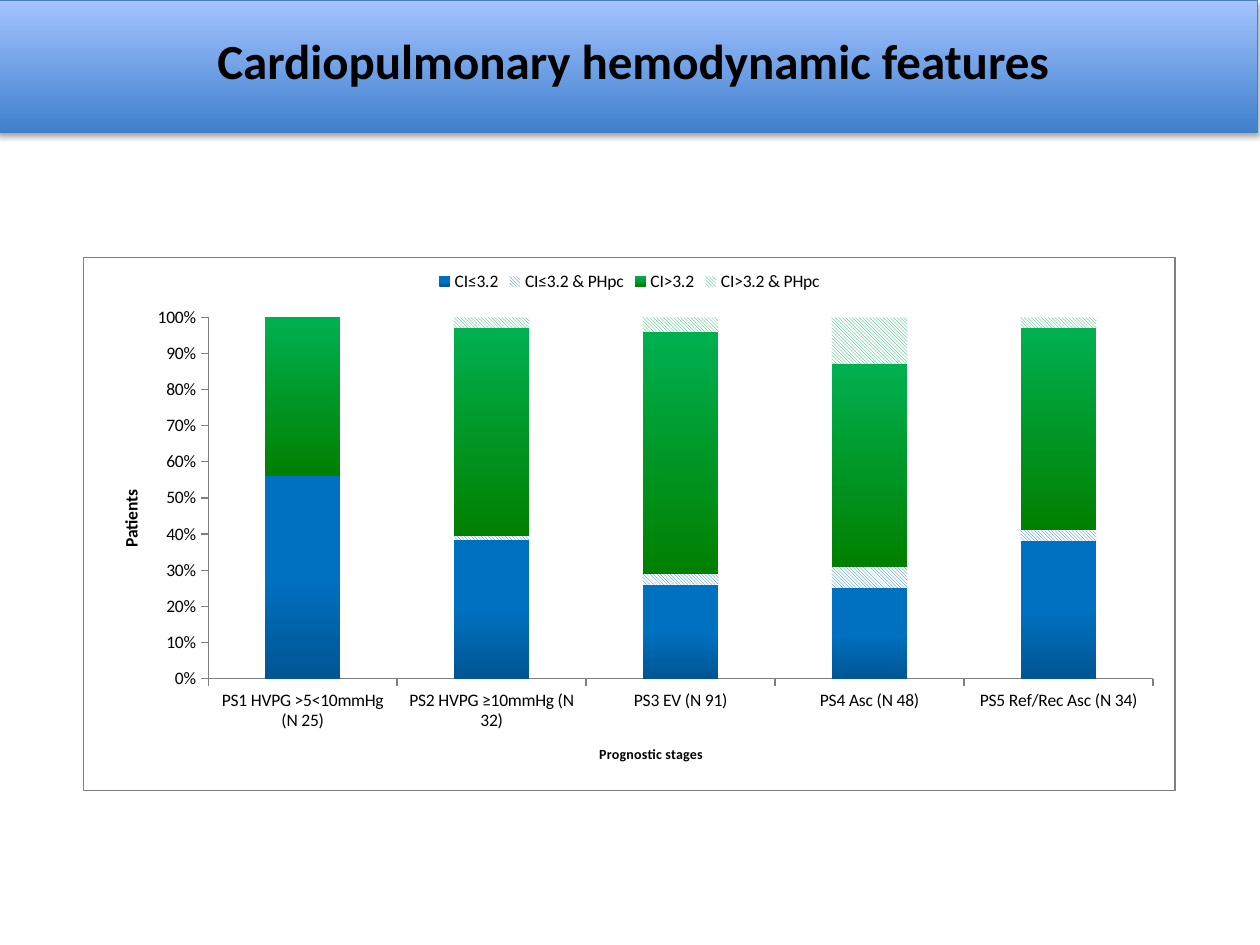
from lxml import etree
from pptx import Presentation
from pptx import util as u
from pptx.chart import data
from pptx.dml.color import RGBColor
from pptx.enum import chart as charts, dml, shapes, text
from pptx.oxml import parse_xml
from pptx.oxml.ns import nsdecls, qn

BLACK = RGBColor(0x00, 0x00, 0x00)
WHITE = RGBColor(0xFF, 0xFF, 0xFF)
GRAY = RGBColor(0x7F, 0x7F, 0x7F)
BANNER_LINE = RGBColor(0x4B, 0x7E, 0xBC)
BANNER_DARK = RGBColor(0x3F, 0x80, 0xCE)
BANNER_LIGHT = RGBColor(0xA4, 0xC4, 0xFF)
BLUE_DARK = RGBColor(0x00, 0x56, 0x95)
BLUE = RGBColor(0x00, 0x70, 0xC0)
GREEN_DARK = RGBColor(0x00, 0x80, 0x00)
GREEN = RGBColor(0x00, 0xB0, 0x50)

STAGES = [
    "PS1 HVPG >5<10mmHg (N 25)",
    "PS2 HVPG ≥10mmHg (N 32)",
    "PS3 EV (N 91)",
    "PS4 Asc (N 48)",
    "PS5 Ref/Rec Asc (N 34)",
]
PATIENTS = {
    "CI≤3.2": (56, 38, 26, 25, 38),
    "CI≤3.2 & PHpc": (0, 1, 3, 6, 3),
    "CI>3.2": (44, 57, 67, 56, 56),
    "CI>3.2 & PHpc": (0, 3, 4, 13, 3),
}


class Deck:
    font_name = "Calibri"

    def __init__(self, slide):
        self.slide = slide

    def style(self, font, size, bold=False):
        font.name = self.font_name
        font.size = u.Pt(size)
        font.bold = bold
        font.color.rgb = BLACK

    def gradient(self, fill, bottom, top, start=0, end=1):
        fill.gradient()
        fill.gradient_angle = 90
        for stop, color, position in zip(fill.gradient_stops, (bottom, top), (start, end)):
            stop.color.rgb = color
            stop.position = position

    def hatch(self, fill, color):
        fill.patterned()
        fill.pattern = dml.MSO_PATTERN.DARK_DOWNWARD_DIAGONAL
        fill.fore_color.rgb = color
        fill.back_color.rgb = WHITE

    def banner(self, left, top, width, height):
        banner = self.slide.shapes.add_shape(
            shapes.MSO_SHAPE.RECTANGLE, left, top, width, height)
        self.gradient(banner.fill, BANNER_DARK, BANNER_LIGHT)
        banner.line.color.rgb = BANNER_LINE
        banner.line.width = u.Pt(0.75)
        banner.shadow.inherit = False
        effects = banner.element.spPr.find(qn("a:effectLst"))
        effects.append(parse_xml(
            f'<a:outerShdw {nsdecls("a")} blurRad="{u.Pt(3.1)}" dist="{u.Pt(1.8)}" '
            'dir="5400000" rotWithShape="0"><a:srgbClr val="000000">'
            '<a:alpha val="35000"/></a:srgbClr></a:outerShdw>'))
        self.slide.shapes.title.element.addprevious(banner.element)

    def title(self, words, left, top, width, height):
        title = self.slide.shapes.title
        title.left, title.top, title.width, title.height = left, top, width, height
        frame = title.text_frame
        frame.text = words
        frame.word_wrap = True
        frame.vertical_anchor = text.MSO_ANCHOR.MIDDLE
        frame.paragraphs[0].alignment = text.PP_ALIGN.CENTER
        self.style(frame.paragraphs[0].font, 28, True)

    def place(self, parent, **settings):
        layout = parent.find(qn("c:layout"))
        if layout is None:
            layout = etree.Element(qn("c:layout"))
            parent.insert(0, layout)
        manual = etree.SubElement(layout, qn("c:manualLayout"))
        for name, value in settings.items():
            etree.SubElement(manual, qn(f"c:{name}")).set("val", str(value))

    def axis(self, axis, words, size, x, y):
        axis.has_major_gridlines = False
        axis.major_tick_mark = charts.XL_TICK_MARK.OUTSIDE
        axis.minor_tick_mark = charts.XL_TICK_MARK.NONE
        axis.format.line.color.rgb = GRAY
        axis.format.line.width = u.Pt(0.75)
        self.style(axis.tick_labels.font, 10)
        heading = axis.axis_title
        heading.text_frame.text = words
        self.style(heading.text_frame.paragraphs[0].font, size, True)
        self.place(heading.element, xMode="edge", yMode="edge", x=x, y=y)
        return heading

    def stacked_chart(self, left, top, width, height):
        stages = data.CategoryChartData()
        stages.categories = STAGES
        for name, values in PATIENTS.items():
            stages.add_series(name, values)
        chart = self.slide.shapes.add_chart(
            charts.XL_CHART_TYPE.COLUMN_STACKED_100,
            left, top, width, height, stages).chart
        self.style(chart.font, 10)
        chart.has_title = False
        chart.has_legend = True
        chart.legend.position = charts.XL_LEGEND_POSITION.TOP
        chart.legend.include_in_layout = False
        self.style(chart.legend.font, 10)

        plot = chart.plots[0]
        plot.gap_width = 150
        plot.overlap = 100
        plot.vary_by_categories = False
        low, low_phpc, high, high_phpc = plot.series
        self.gradient(low.format.fill, BLUE_DARK, BLUE, 0.01, 0.5)
        self.hatch(low_phpc.format.fill, BLUE)
        self.gradient(high.format.fill, GREEN_DARK, GREEN)
        self.hatch(high_phpc.format.fill, GREEN)

        self.axis(chart.category_axis, "Prognostic stages", 8, 0.47, 0.91)
        patients = self.axis(chart.value_axis, "Patients", 10, 0.03, 0.43)
        patients.element.find(f".//{qn('a:bodyPr')}").set("rot", "-5400000")
        chart.value_axis.major_unit = 0.1
        chart.value_axis.tick_labels.number_format = "0%"
        chart.value_axis.tick_labels.number_format_is_linked = False

        space = chart.element
        self.place(space.find(f".//{qn('c:plotArea')}"), layoutTarget="inner",
                   xMode="edge", yMode="edge", x=0.114, y=0.112, w=0.866, h=0.678)
        space.find(qn("c:txPr")).addprevious(parse_xml(
            f'<c:spPr {nsdecls("c", "a")}><a:solidFill><a:srgbClr val="{WHITE}"/></a:solidFill>'
            f'<a:ln w="{u.Pt(0.75)}"><a:solidFill><a:srgbClr val="{GRAY}"/></a:solidFill>'
            '</a:ln></c:spPr>'))


def main():
    presentation = Presentation()
    presentation.slide_width = u.Inches(10)
    presentation.slide_height = u.Inches(7.5)
    deck = Deck(presentation.slides.add_slide(presentation.slide_layouts[5]))
    deck.banner(u.Inches(-0.02), u.Inches(0), u.Inches(10), u.Inches(1.05))
    deck.title("Cardiopulmonary hemodynamic features",
               u.Inches(1.01), u.Inches(0.19), u.Inches(8.03), u.Inches(0.57))
    deck.stacked_chart(u.Inches(0.66), u.Inches(2.04), u.Inches(8.67), u.Inches(4.24))
    presentation.save("out.pptx")


if __name__ == "__main__":
    main()
